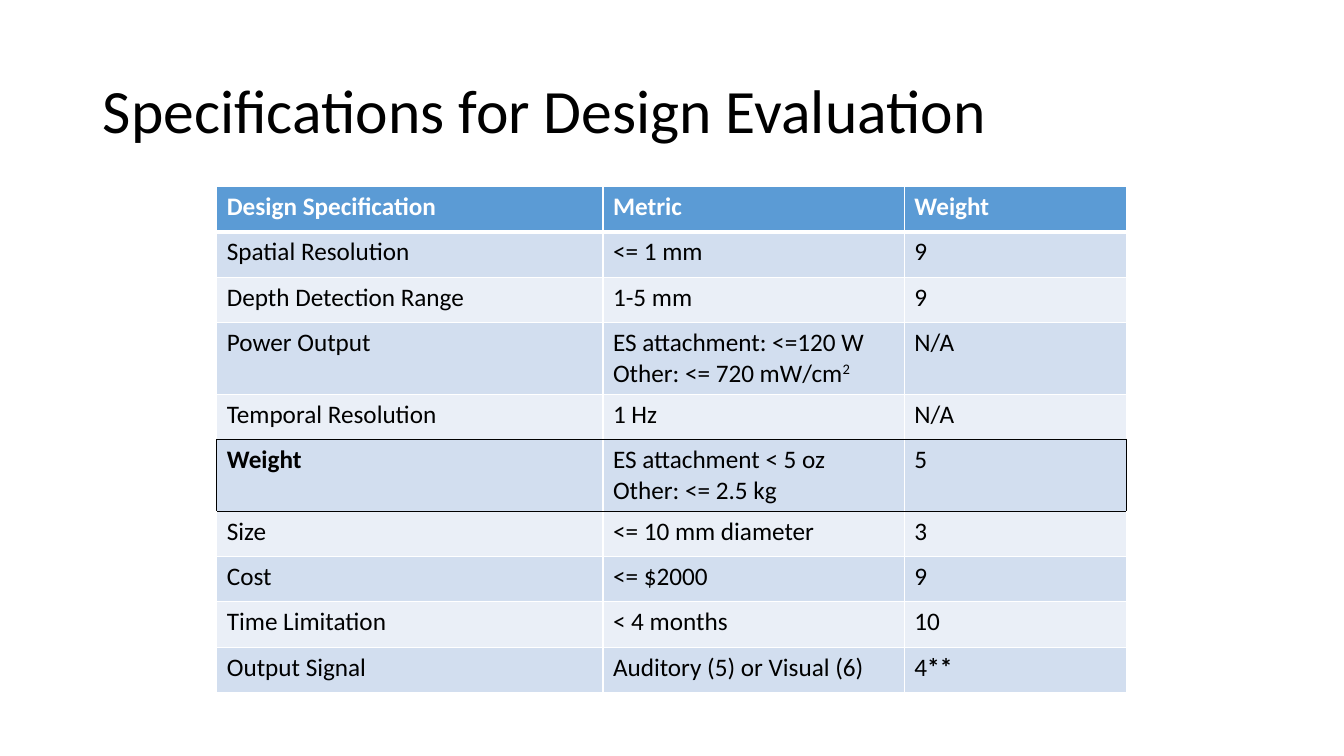
import pptx
import pptx.util
import pptx.dml.color
import pptx.enum.text
import pptx.oxml
import pptx.oxml.ns
from pptx.util import Inches


def paint(code):
    return pptx.dml.color.RGBColor.from_string(code)


def write(para, text, size=18, color="000000", bold=False, base=0):
    run = para.add_run()
    run.text = text
    run.font.size = pptx.util.Pt(size)
    run.font.name = "Calibri"
    run.font.bold = bold
    run.font.color.rgb = paint(color)
    if base:
        run._r.get_or_add_rPr().set("baseline", str(base * 1000))


deck = pptx.Presentation()
deck.slide_width = Inches(13.33)
deck.slide_height = Inches(7.5)
slide = deck.slides.add_slide(deck.slide_layouts[5])

title = slide.shapes.title
title.left, title.top = Inches(0.92), Inches(0.4)
title.width, title.height = Inches(11.5), Inches(1.45)
frame = title.text_frame
frame.word_wrap = True
frame.auto_size = pptx.enum.text.MSO_AUTO_SIZE.NONE
frame.vertical_anchor = pptx.enum.text.MSO_ANCHOR.MIDDLE
head = frame.paragraphs[0]
head.alignment = pptx.enum.text.PP_ALIGN.LEFT
head.line_spacing = 0.9
write(head, "Specifications for Design Evaluation", size=44)

rows = [
    ("Design Specification", "Metric", "Weight"),
    ("Spatial Resolution", "<= 1 mm", "9"),
    ("Depth Detection Range", "1-5 mm", "9"),
    ("Power Output", "ES attachment: <=120 W\nOther: <= 720 mW/cm", "N/A"),
    ("Temporal Resolution", "1 Hz", "N/A"),
    ("Weight", "ES attachment < 5 oz\nOther: <= 2.5 kg", "5"),
    ("Size", "<= 10 mm diameter", "3"),
    ("Cost", "<= $2000", "9"),
    ("Time Limitation", "< 4 months", "10"),
    ("Output Signal", "Auditory (5) or Visual (6)", "4"),
]
widths = [3.83, 2.99, 2.2]
boxed = 5
extra = {(3, 1): ("2", {"base": 30}), (9, 2): ("**", {"bold": True})}

grid = slide.shapes.add_table(
    len(rows), len(widths), Inches(2.15), Inches(1.85),
    Inches(sum(widths)), Inches(0.45 * len(rows))).table
for col, width in zip(grid.columns, widths):
    col.width = Inches(width)

for r, row in enumerate(rows):
    for c, text in enumerate(row):
        cell = grid.cell(r, c)
        bold = r == 0 or (r, c) == (boxed, 0)
        ink = "FFFFFF" if r == 0 else "000000"
        for n, line in enumerate(text.split("\n")):
            frame = cell.text_frame
            para = frame.add_paragraph() if n else frame.paragraphs[0]
            write(para, line, color=ink, bold=bold)
        if (r, c) in extra:
            mark, style = extra[r, c]
            write(para, mark, **style)

        dark = {
            "L": r == boxed and c == 0,
            "R": r == boxed and c == len(widths) - 1,
            "T": r in (boxed, boxed + 1),
            "B": r in (boxed - 1, boxed),
        }
        for side, black in dark.items():
            thick = 3 if (r, side) in ((0, "B"), (1, "T")) else 1
            edge = "000000" if black else "FFFFFF"
            cell._tc.get_or_add_tcPr().append(pptx.oxml.parse_xml(
                f'<a:ln{side} {pptx.oxml.ns.nsdecls("a")} w="{thick * 12700}">'
                f'<a:solidFill><a:srgbClr val="{edge}"/></a:solidFill>'
                f'</a:ln{side}>'))
        cell.fill.solid()
        band = "D2DEEF" if r % 2 else "EAEFF7"
        cell.fill.fore_color.rgb = paint(band if r else "5B9BD5")

deck.save("out.pptx")
